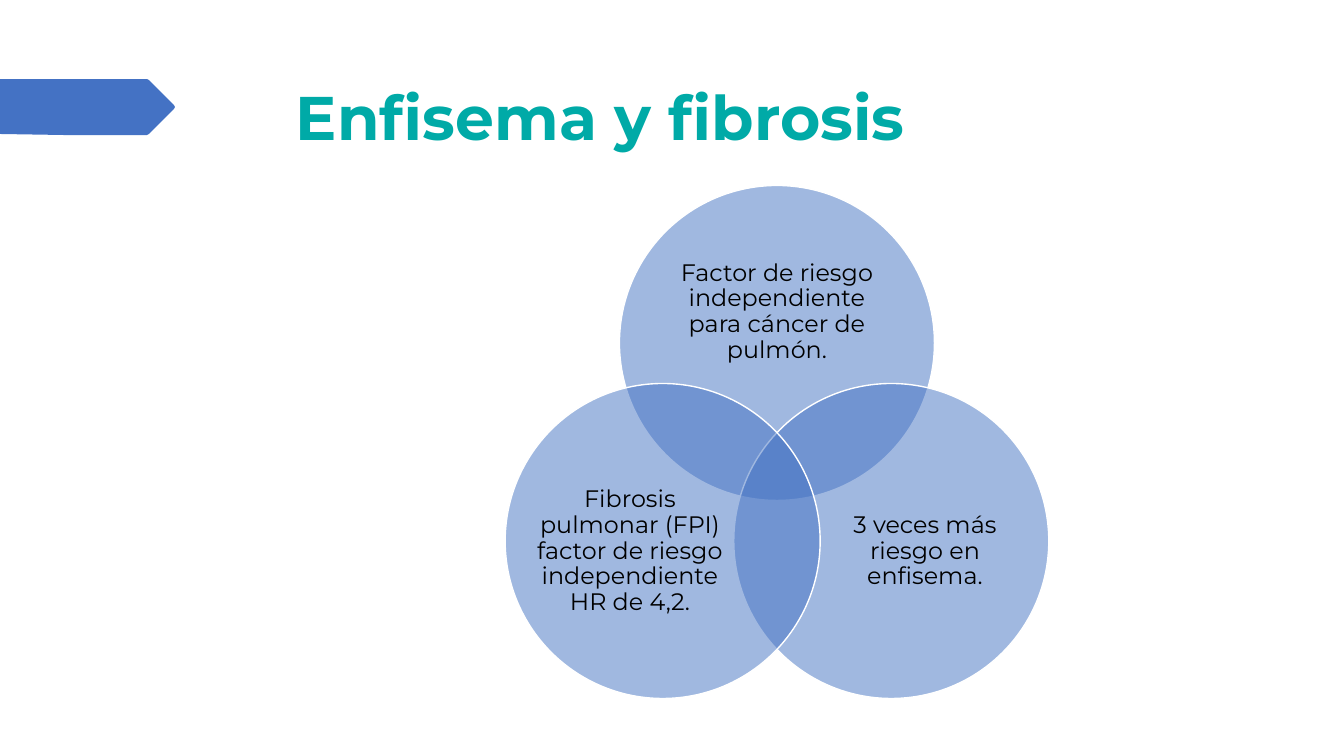
import math

import pptx
import pptx.util
from lxml import etree
from pptx.dml.color import RGBColor
from pptx.enum.shapes import MSO_SHAPE
from pptx.enum.text import MSO_ANCHOR, PP_ALIGN
from pptx.oxml.ns import qn

PX = 914400 / 100.8  # EMU per px
FONT = "Montserrat"
BLUE = RGBColor(0x44, 0x72, 0xC4)
VENN_BLUE = RGBColor(0x43, 0x72, 0xC3)
TEAL = RGBColor(0x00, 0xAA, 0xA7)
BLACK = RGBColor(0x00, 0x00, 0x00)
WHITE = RGBColor(0xFF, 0xFF, 0xFF)

TAG_POINTS = [(0, 79), (147, 79), (149, 80), (174, 105), (175, 107),
              (174, 109), (149, 134), (147, 135), (64, 135), (0, 134)]

# Venn: three circles evenly spaced around a common centre
VENN_X, VENN_Y, VENN_RADIUS, DIAMETER = 777, 475, 132, 315
# angle in degrees, text, text box
VENN = [
    (-90, "Factor de riesgo independiente para cáncer de pulmón.",
     (661, 241, 232, 142)),
    (30, "3 veces más riesgo en enfisema.", (830, 465, 190, 173)),
    (150, "Fibrosis pulmonar (FPI) factor de riesgo independiente HR de 4,2.",
     (535, 465, 190, 173)),
]


def px(n):
    return pptx.util.Emu(round(n * PX))


def add_text(s, box, text, size, color, bold=False, align=PP_ALIGN.LEFT,
             inset=(0, 0)):
    tf = s.shapes.add_textbox(*map(px, box)).text_frame
    tf.word_wrap = True
    tf.vertical_anchor = MSO_ANCHOR.MIDDLE
    tf.margin_left = tf.margin_right = px(inset[0])
    tf.margin_top = tf.margin_bottom = px(inset[1])
    p = tf.paragraphs[0]
    p.alignment = align
    p.line_spacing = 0.9
    r = p.add_run()
    r.text = text
    r.font.name = FONT
    r.font.size = pptx.util.Pt(size)
    r.font.bold = bold
    r.font.color.rgb = color


def add_tag(s, points):
    builder = s.shapes.build_freeform(*points[0], scale=PX)
    builder.add_line_segments(points[1:], close=True)
    sp = builder.convert_to_shape()
    sp.shadow.inherit = False
    sp.fill.solid()
    sp.fill.fore_color.rgb = BLUE
    sp.line.fill.background()


def add_circle(s, angle):
    a = math.radians(angle)
    left = VENN_X + VENN_RADIUS * math.cos(a) - DIAMETER / 2
    top = VENN_Y + VENN_RADIUS * math.sin(a) - DIAMETER / 2
    sp = s.shapes.add_shape(MSO_SHAPE.OVAL, px(left), px(top),
                            px(DIAMETER), px(DIAMETER))
    sp.shadow.inherit = False
    sp.fill.solid()
    sp.fill.fore_color.rgb = VENN_BLUE
    color = sp.fill._xPr.find(qn("a:solidFill"))[0]
    etree.SubElement(color, qn("a:alpha")).set("val", "50000")
    sp.line.color.rgb = WHITE
    sp.line.width = pptx.util.Pt(1)


def main():
    prs = pptx.Presentation()
    prs.slide_width, prs.slide_height = px(1344), px(756)
    s = prs.slides.add_slide(prs.slide_layouts[6])

    # Side tag and title
    add_tag(s, TAG_POINTS)
    add_text(s, (286, 50, 983, 141), "Enfisema y fibrosis", 44, TEAL,
             bold=True, inset=(10, 5))

    # Venn diagram
    for angle, text, box in VENN:
        add_circle(s, angle)
        add_text(s, box, text, 17, BLACK, align=PP_ALIGN.CENTER)

    prs.save("out.pptx")


if __name__ == "__main__":
    main()
